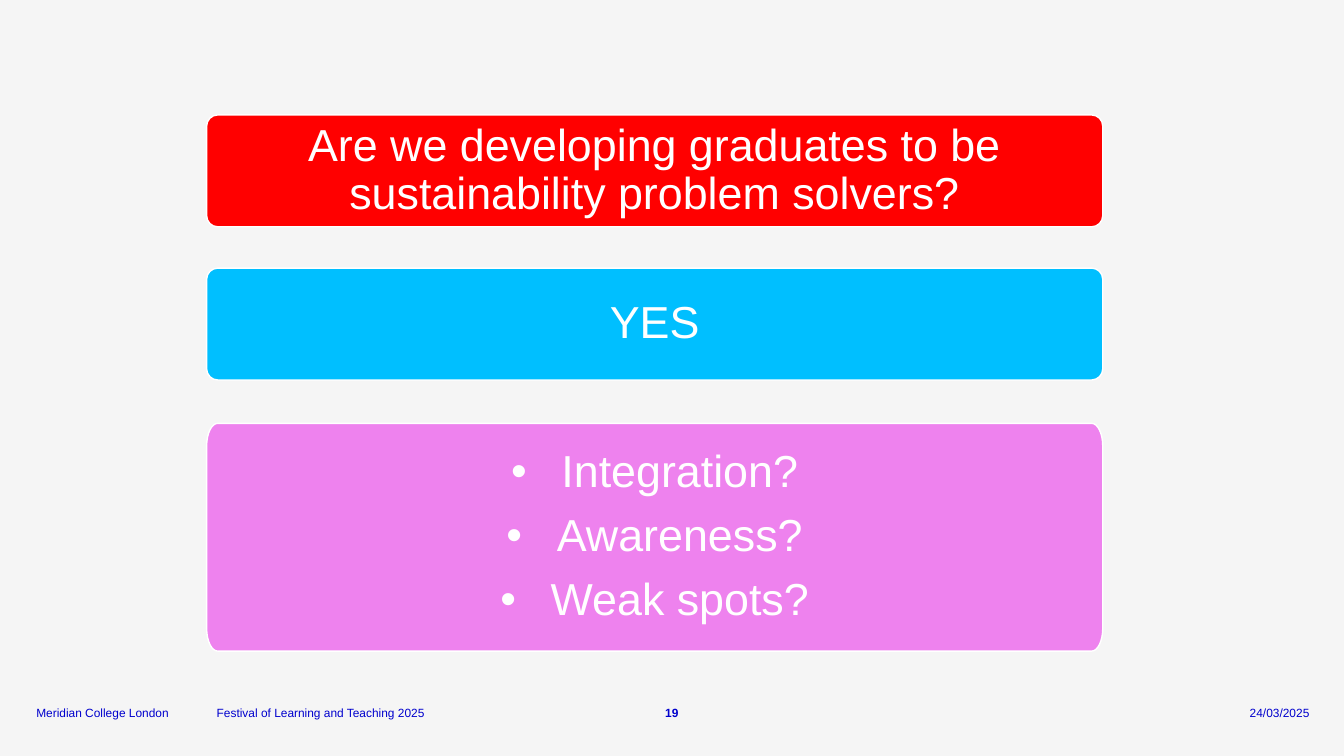
from lxml.etree import SubElement
from pptx import Presentation
from pptx.dml.color import RGBColor
from pptx.enum.text import MSO_ANCHOR as Anchor, PP_ALIGN as Align
from pptx.oxml.ns import qn
from pptx.util import Emu, Inches, Pt

FONT = "Arial"
COLORS = {
    "background": "F5F5F5",
    "footer": "0000CD",
    "white": "FFFFFF",
    "question": "FF0000",
    "answer": "00BFFF",
    "doubts": "EE82EE",
}
CARD_LEFT, CARD_WIDTH = 2.05, 8.89
CORNER_WIDTH, CORNER_SHARE = 0.11, 0.1
ARC_PULL = 0.55

# top, height, colour, lines, bulleted
CARDS = [
    (1.14, 1.11, "question",
     ["Are we developing graduates to be sustainability problem solvers?"], False),
    (2.66, 1.11, "answer", ["YES"], False),
    (4.2, 2.26, "doubts", ["Integration?", "Awareness?", "Weak spots?"], True),
]

FOOTER_TOP, FOOTER_HEIGHT = 6.99, 0.15
# left, width, text, alignment, bold
FOOTERS = [
    (0.36, 1.55, "Meridian College London", Align.LEFT, False),
    (11.64, 1.35, "24/03/2025", Align.RIGHT, False),
    (2.15, 3.74, "Festival of Learning and Teaching 2025", Align.LEFT, False),
    (6.49, 0.35, "19", Align.CENTER, True),
]


def color(name):
    return RGBColor.from_string(COLORS[name])


def add_run(paragraph, text, size, color_name, bold=False):
    run = paragraph.add_run()
    run.text = text
    font = run.font
    font.name, font.size, font.bold = FONT, Pt(size), bold
    font.color.rgb = color(color_name)


def set_frame(frame, anchor, inset):
    frame.word_wrap = True
    frame.vertical_anchor = anchor
    frame.margin_left = frame.margin_right = Inches(inset)
    frame.margin_top = frame.margin_bottom = Inches(inset)


def add_bullet(paragraph):
    properties = paragraph._p.get_or_add_pPr()
    properties.set("marL", str(Inches(0.5)))
    properties.set("indent", str(-Inches(0.5)))
    SubElement(properties, qn("a:buFont")).set("typeface", FONT)
    SubElement(properties, qn("a:buChar")).set("char", "•")


def add_rounded_box(slide, left, top, width, height):
    """Box whose corners are elliptical arcs that scale with its height."""
    left, top, width, height = map(Inches, (left, top, width, height))
    right, bottom = left + width, top + height
    radius_x, radius_y = Inches(CORNER_WIDTH), int(height * CORNER_SHARE)
    corners = [(left, top), (right, top), (right, bottom), (left, bottom)]
    points = []
    for index, (x, y) in enumerate(corners):
        inner_x = x + radius_x if x == left else x - radius_x
        inner_y = y + radius_y if y == top else y - radius_y
        ends = [(x, inner_y), (inner_x, y)]
        points += ends[::-1] if index % 2 else ends
    builder = slide.shapes.build_freeform(*points[0])
    builder.add_line_segments(points[1:], close=True)
    shape = builder.convert_to_shape()
    segments = list(shape._element.iter(qn("a:lnTo")))
    for index, corner in enumerate(corners):
        bend_corner(segments[2 * index], corner, points[2 * index:2 * index + 2],
                    (left, top))
    return shape


def bend_corner(segment, corner, ends, origin):
    """Turn a straight corner cut into a curve pulled towards the corner."""
    segment.tag = qn("a:cubicBezTo")
    for position, end in enumerate(ends):
        control = SubElement(segment, qn("a:pt"))
        for axis, start, target, zero in zip("xy", end, corner, origin):
            pulled = start + (target - start) * ARC_PULL - zero
            control.set(axis, str(int(pulled)))
        segment.insert(position, control)


def add_card(slide, top, height, color_name, lines, bulleted):
    shape = add_rounded_box(slide, CARD_LEFT, top, CARD_WIDTH, height)
    shape.shadow.inherit = False
    shape.fill.solid()
    shape.fill.fore_color.rgb = color(color_name)
    shape.line.color.rgb = color("white")
    shape.line.width = Pt(1)
    frame = shape.text_frame
    set_frame(frame, Anchor.MIDDLE, 0.17)
    for index, line in enumerate(lines):
        paragraph = frame.add_paragraph() if index else frame.paragraphs[0]
        paragraph.alignment = Align.CENTER
        paragraph.line_spacing = 0.9
        paragraph.space_after = Pt(11.2)
        if bulleted:
            add_bullet(paragraph)
        add_run(paragraph, line, 32, "white")


def add_footer(slide, left, width, text, alignment, bold):
    box = slide.shapes.add_textbox(Inches(left), Inches(FOOTER_TOP),
                                   Inches(width), Inches(FOOTER_HEIGHT))
    set_frame(box.text_frame, Anchor.BOTTOM, 0)
    paragraph = box.text_frame.paragraphs[0]
    paragraph.alignment = alignment
    add_run(paragraph, text, 8.5, "footer", bold)


def main():
    presentation = Presentation()
    presentation.slide_width = Emu(12192000)
    presentation.slide_height = Inches(7.5)
    slide = presentation.slides.add_slide(presentation.slide_layouts[6])
    slide.background.fill.solid()
    slide.background.fill.fore_color.rgb = color("background")
    for footer in FOOTERS:
        add_footer(slide, *footer)
    for card in CARDS:
        add_card(slide, *card)
    presentation.save("out.pptx")


if __name__ == "__main__":
    main()
